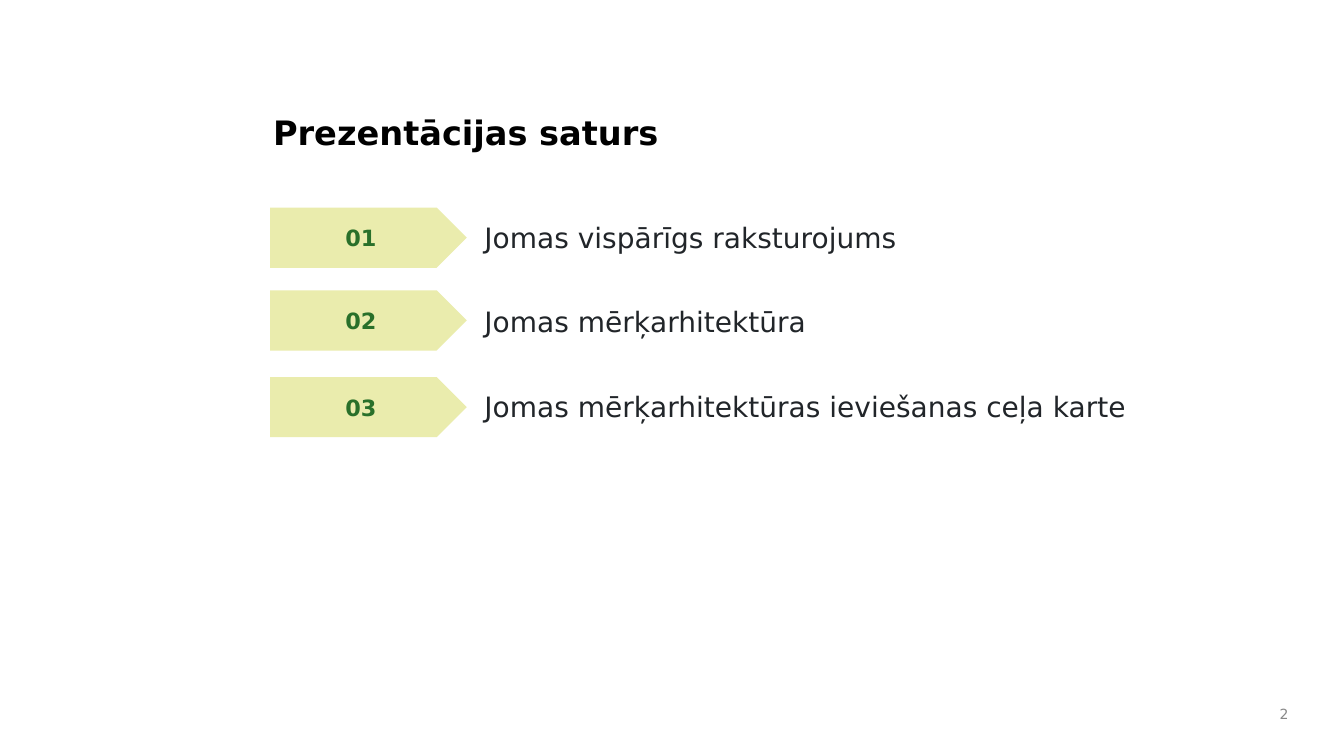
from pptx import Presentation
from pptx.dml.color import RGBColor
from pptx.enum.shapes import MSO_SHAPE
from pptx.enum.text import MSO_ANCHOR, PP_ALIGN
from pptx.util import Pt

PENTAGON = MSO_SHAPE.PENTAGON
TOP, MIDDLE = MSO_ANCHOR.TOP, MSO_ANCHOR.MIDDLE
LEFT, CENTER, RIGHT = PP_ALIGN.LEFT, PP_ALIGN.CENTER, PP_ALIGN.RIGHT

FONT = "DejaVu Sans"
BLACK = RGBColor(0x00, 0x00, 0x00)
DARK = RGBColor(0x21, 0x25, 0x29)
GRAY = RGBColor(0x89, 0x89, 0x89)
GREEN = RGBColor(0x29, 0x70, 0x2A)
LIME = RGBColor(0xEA, 0xEC, 0xAD)

TOPICS = [
    "Jomas vispārīgs raksturojums",
    "Jomas mērķarhitektūra",
    "Jomas mērķarhitektūras ieviešanas ceļa karte",
]
MARKER_TOPS = [148.3, 207.4, 269.3]


def write_text(shape, *lines, size, color, bold=False, align=LEFT, anchor=MIDDLE,
               line_spacing=1.0, before=0, after=0):
    """Fill a shape with one paragraph per line; before and after apply between paragraphs."""
    frame = shape.text_frame
    frame.word_wrap = True
    frame.vertical_anchor = anchor
    for index, line in enumerate(lines):
        paragraph = frame.add_paragraph() if index else frame.paragraphs[0]
        paragraph.text = line
        paragraph.alignment = align
        paragraph.line_spacing = line_spacing
        paragraph.space_before = Pt(before if index else 0)
        paragraph.space_after = Pt(after if index < len(lines) - 1 else 0)
        font = paragraph.font
        font.name, font.size, font.bold = FONT, Pt(size), bold
        font.color.rgb = color


def add_text(slide, left, top, width, height, *lines, **text_format):
    box = slide.shapes.add_textbox(Pt(left), Pt(top), Pt(width), Pt(height))
    write_text(box, *lines, **text_format)


def add_marker(slide, top, label):
    marker = slide.shapes.add_shape(PENTAGON, Pt(193), Pt(top), Pt(140.4), Pt(43))
    marker.shadow.inherit = False
    marker.fill.solid()
    marker.fill.fore_color.rgb = LIME
    marker.line.fill.background()
    write_text(marker, label, size=16, color=GREEN, bold=True, align=CENTER)


def main():
    presentation = Presentation()
    presentation.slide_width, presentation.slide_height = Pt(960), Pt(540)
    slide = presentation.slides.add_slide(presentation.slide_layouts[6])

    add_text(slide, 188, 53.3, 640, 81.4, "Prezentācijas saturs",
             size=24, color=BLACK, bold=True)
    add_text(slide, 339, 152, 543, 361.4, *TOPICS, size=20, color=DARK,
             anchor=TOP, line_spacing=1.07, before=4.7, after=30)
    for number, top in enumerate(MARKER_TOPS, start=1):
        add_marker(slide, top, f"{number:02d}")
    add_text(slide, 895.7, 498.2, 31.7, 23.8, "2", size=10, color=GRAY, align=RIGHT)

    presentation.save("out.pptx")


if __name__ == "__main__":
    main()
